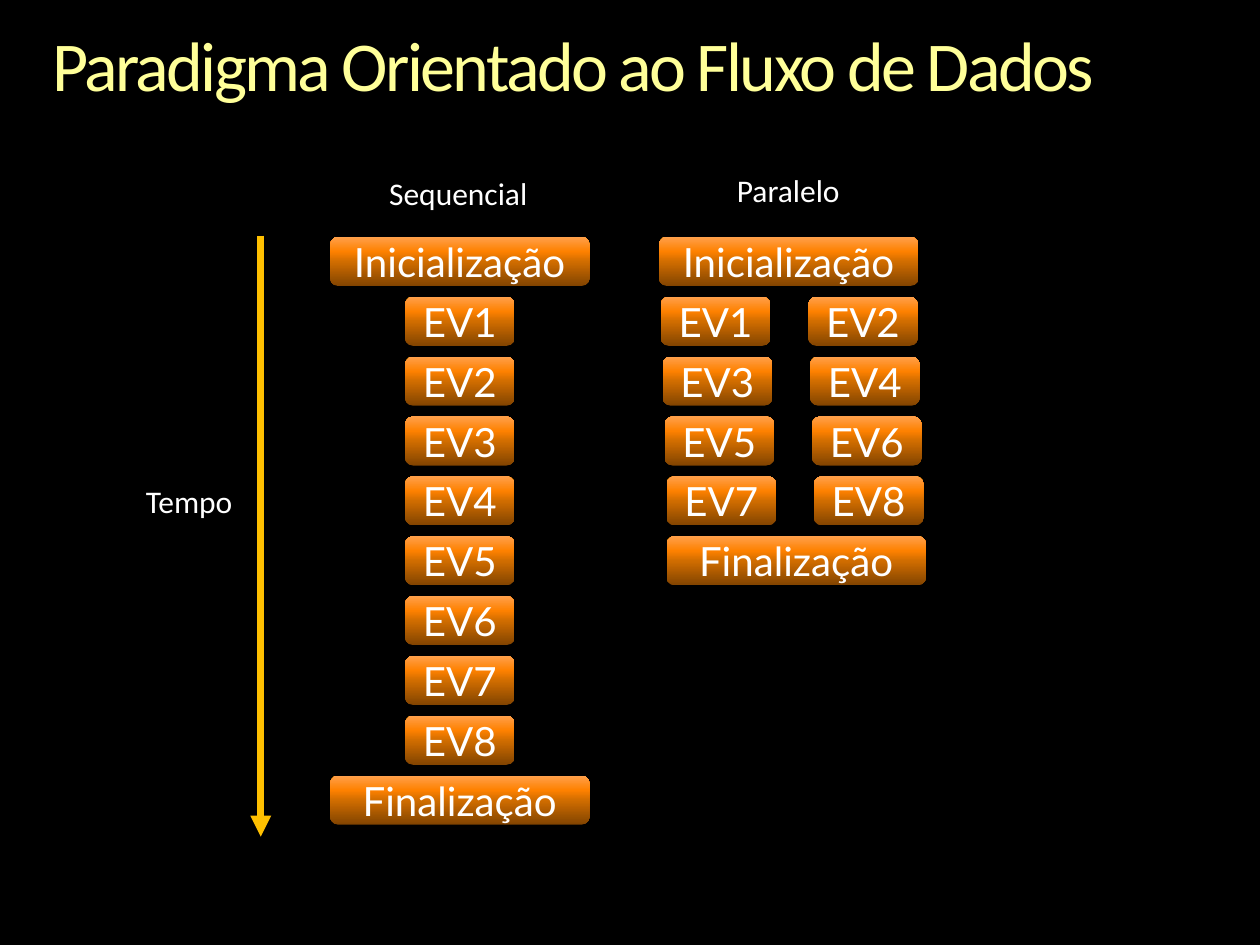
from lxml import etree
from pptx import Presentation, util as u
from pptx.dml import color
from pptx.enum import shapes, text
from pptx.oxml import ns

ROW, BOX_H = 0.475, 0.39
WIDE, NARROW = 2.06, 0.87
TOP = 1.88
DRIFT = 0.015
EVENTS = [f"EV{n}" for n in range(1, 9)]
ORANGE_STOPS = [(0, "824400"), (50, "D16D00"), (70, "FE8100"), (100, "FFA04B")]


def rgb(value):
    """Turn a hex string into a colour."""
    return color.RGBColor.from_string(value)


def add_xml(parent, tag, **attributes):
    """Append a DrawingML child element and return it."""
    child = etree.SubElement(parent, ns.qn(tag))
    for name, value in attributes.items():
        child.set(name, str(value))
    return child


def write(frame, words, size, font, ink):
    """Write one run into the first paragraph and return it."""
    run = frame.paragraphs[0].add_run()
    run.text = words
    run.font.size = u.Pt(size)
    run.font.name = font
    run.font.color.rgb = rgb(ink)
    return run


def paint_orange(step):
    """Give a step its vertical gradient and soft shadow."""
    step.fill.gradient()
    step.fill.gradient_angle = 90
    stops = step._element.spPr.find(ns.qn("a:gradFill")).find(ns.qn("a:gsLst"))
    for old in list(stops):
        stops.remove(old)
    for share, tone in ORANGE_STOPS:
        add_xml(add_xml(stops, "a:gs", pos=share * 1000), "a:srgbClr", val=tone)
    step.line.fill.background()
    step.shadow.inherit = False
    effects = step._element.spPr.find(ns.qn("a:effectLst"))
    shadow = add_xml(effects, "a:outerShdw", blurRad=u.Pt(5), dist=u.Pt(3),
                     dir=5400000, rotWithShape=0)
    add_xml(add_xml(shadow, "a:srgbClr", val="000000"), "a:alpha", val=45000)


def add_step(slide, words, left, row, width):
    """Place one step of the program on its grid row."""
    step = slide.shapes.add_shape(
        shapes.MSO_SHAPE.ROUNDED_RECTANGLE, u.Inches(left),
        u.Inches(TOP + row * ROW), u.Inches(width), u.Inches(BOX_H))
    paint_orange(step)
    frame = step.text_frame
    frame.vertical_anchor = text.MSO_ANCHOR.MIDDLE
    frame.paragraphs[0].alignment = text.PP_ALIGN.CENTER
    write(frame, words, 23, "Lato", "FFFFFF")


def add_label(slide, words, left, top, width):
    """Place a small white label."""
    label = slide.shapes.add_textbox(*map(u.Inches, (left, top, width, 0.4)))
    label.text_frame.word_wrap = False
    write(label.text_frame, words, 18, "Calibri", "FFFFFF")


def add_title(slide, left, top, width, height):
    """Place the slide title."""
    title = slide.shapes.add_textbox(*map(u.Inches, (left, top, width, height)))
    frame = title.text_frame
    frame.word_wrap = True
    frame.margin_left = frame.margin_right = 0
    frame.margin_top = frame.margin_bottom = 0
    frame.paragraphs[0].line_spacing = 0.9
    run = write(frame, "Paradigma Orientado ao Fluxo de Dados", 40, "Calibri", "FFFF99")
    run.font._element.set("spc", "-150")


def add_sequential(slide, left):
    """Stack all the steps in a single column."""
    add_label(slide, "Sequencial", left + 0.37, 1.33, 1.31)
    add_step(slide, "Inicialização", left, 0, WIDE)
    for row, event in enumerate(EVENTS, 1):
        add_step(slide, event, left + (WIDE - NARROW) / 2, row, NARROW)
    add_step(slide, "Finalização", left, len(EVENTS) + 1, WIDE)


def add_parallel(slide, left):
    """Lay the events out in pairs, each row slightly to the right."""
    add_label(slide, "Paralelo", left + 0.52, 1.31, 1.03)
    add_step(slide, "Inicialização", left, 0, WIDE)
    for index, event in enumerate(EVENTS):
        row, side = index // 2 + 1, index % 2
        add_step(slide, event, left + row * DRIFT + side * 1.17, row, NARROW)
    last_row = len(EVENTS) // 2 + 1
    add_step(slide, "Finalização", left + (last_row - 1) * DRIFT, last_row, WIDE)


def add_time_axis(slide, x, top, bottom):
    """Draw the downward time arrow and its label."""
    add_label(slide, "Tempo", x - 1.01, 3.78, 0.9)
    axis = slide.shapes.add_connector(
        shapes.MSO_CONNECTOR.STRAIGHT, *map(u.Inches, (x, top, x, bottom)))
    axis.line.width = u.Pt(4)
    axis.line.color.rgb = rgb("FFC000")
    add_xml(axis.line._get_or_add_ln(), "a:tailEnd", type="triangle")
    add_xml(axis._element.spPr, "a:effectLst")


def main():
    """Build the slide and save it."""
    deck = Presentation()
    deck.slide_width, deck.slide_height = u.Inches(10), u.Inches(7.5)
    slide = deck.slides.add_slide(deck.slide_layouts[6])
    slide.background.fill.solid()
    slide.background.fill.fore_color.rgb = rgb("000000")
    add_title(slide, 0.42, 0.25, 9.17, 0.61)
    add_sequential(slide, 2.62)
    add_parallel(slide, 5.23)
    add_time_axis(slide, 2.07, 1.87, 6.64)
    deck.save("out.pptx")


if __name__ == "__main__":
    main()
